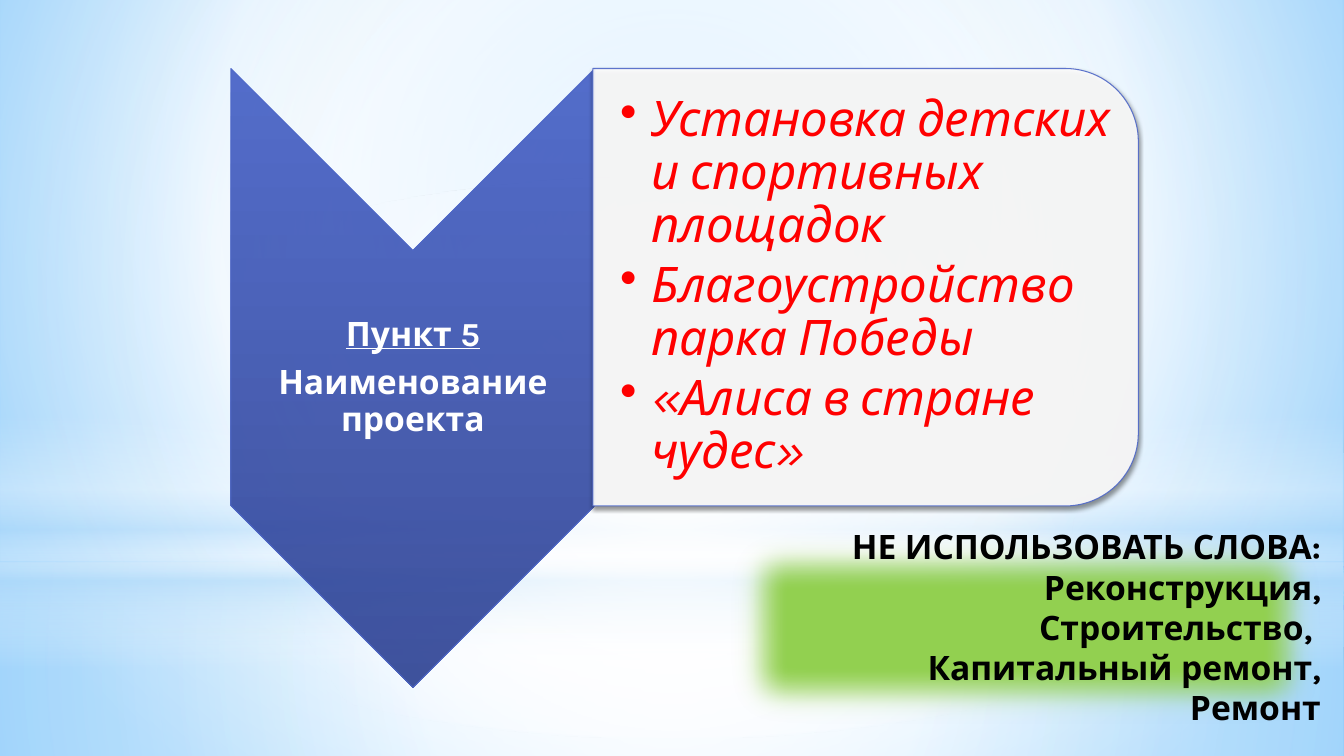
import pptx
import pptx.util
import pptx.oxml
import pptx.oxml.ns
from pptx.dml.color import RGBColor
from pptx.enum.shapes import MSO_SHAPE
from pptx.enum.text import MSO_ANCHOR, PP_ALIGN
from pptx.util import Inches, Pt

FONT = "Karla"
WHITE = RGBColor(0xFF, 0xFF, 0xFF)
BLACK = RGBColor(0x00, 0x00, 0x00)
RED = RGBColor(0xFF, 0x00, 0x00)
GREEN = RGBColor(0x92, 0xD0, 0x50)
EDGE_BLUE = RGBColor(0x4E, 0x67, 0xC8)
ARROW_TOP = RGBColor(0x43, 0x5E, 0xC5)
ARROW_BOTTOM = RGBColor(0x2B, 0x40, 0x92)
PALE_BLUE = RGBColor(0xB4, 0xDC, 0xFA)
SKY = RGBColor(0x9E, 0xD5, 0xFF)
DEEP_SKY = RGBColor(0x5B, 0xB9, 0xFF)
CENTRE = (50, 50, 50, 50)


def xml(text):
    return pptx.oxml.parse_xml(
        text.replace(">", " " + pptx.oxml.ns.nsdecls("a") + ">", 1))


def set_gradient(fill, owner, stops, focus=None):
    fill.gradient()
    old = owner.find(pptx.oxml.ns.qn("a:gradFill"))
    gs = "".join(
        f'<a:gs pos="{pos * 1000}"><a:srgbClr val="{color}">'
        f'<a:alpha val="{alpha * 1000}"/></a:srgbClr></a:gs>'
        for pos, color, alpha in stops)
    if focus:
        sides = " ".join(f'{k}="{v * 1000}"' for k, v in zip("ltrb", focus))
        way = f'<a:path path="circle"><a:fillToRect {sides}/></a:path>'
    else:
        way = '<a:lin ang="5400000" scaled="0"/>'
    owner.replace(old, xml(
        f'<a:gradFill rotWithShape="0"><a:gsLst>{gs}</a:gsLst>{way}</a:gradFill>'))


def set_alpha(owner, percent):
    for clr in owner.iterfind("./" + pptx.oxml.ns.qn("a:solidFill") + "/*"):
        clr.append(xml(f'<a:alpha val="{percent * 1000}"></a:alpha>'))


def add_shape(slide, kind, x, y, w, h):
    sp = slide.shapes.add_shape(kind, Inches(x), Inches(y), Inches(w), Inches(h))
    sp.shadow.inherit = False
    sp.line.fill.background()
    return sp


def add_turned(slide, kind, x, y, w, h):
    sp = add_shape(slide, kind, x + (w - h) / 2, y + (h - w) / 2, h, w)
    sp.rotation = 90
    sp.line.color.rgb = EDGE_BLUE
    sp.line.width = Pt(0.75)
    set_alpha(sp.element.spPr.find(pptx.oxml.ns.qn("a:ln")), 90)
    return sp


def add_effect(sp, effect):
    sp.element.spPr.find(pptx.oxml.ns.qn("a:effectLst")).append(xml(effect))


def add_text_box(slide, x, y, w, h, left=0.02):
    tf = slide.shapes.add_textbox(
        Inches(x), Inches(y), Inches(w), Inches(h)).text_frame
    tf.word_wrap = True
    tf.vertical_anchor = MSO_ANCHOR.MIDDLE
    tf.margin_left = Inches(left)
    tf.margin_top = tf.margin_right = tf.margin_bottom = Inches(0.02)
    return tf


def add_paragraphs(tf, lines, size, color, align, bold=False, italic=False):
    for i, line in enumerate(lines):
        p = tf.add_paragraph() if i else tf.paragraphs[0]
        p.alignment = align
        r = p.add_run()
        r.text = line
        r.font.name = FONT
        r.font.size = Pt(size)
        r.font.color.rgb = color
        r.font.bold = bold
        r.font.italic = italic


def space_paragraphs(tf, after):
    for p in tf.paragraphs:
        p.line_spacing = 0.9
        p.space_after = Pt(after)


def draw_backdrop(slide, w, h):
    slide.background.fill.solid()
    bg = slide.element.cSld.bg.bgPr
    set_gradient(slide.background.fill, bg,
                 [(0, SKY, 100), (60, WHITE, 100), (100, DEEP_SKY, 100)],
                 (20, 10, 20, 60))
    horizon = 5.58
    layers = [
        (MSO_SHAPE.RECTANGLE, horizon, h - horizon, CENTRE,
         [(0, WHITE, 91), (37, WHITE, 76), (100, PALE_BLUE, 79)]),
        (MSO_SHAPE.RECTANGLE, 0, horizon, CENTRE,
         [(0, WHITE, 89), (48, WHITE, 62), (100, PALE_BLUE, 79)]),
        (MSO_SHAPE.RECTANGLE, 4.12, 2.5, None,
         [(0, WHITE, 0), (29, WHITE, 30), (45, PALE_BLUE, 40),
          (55, WHITE, 26), (65, PALE_BLUE, 60), (100, WHITE, 0)]),
        (MSO_SHAPE.OVAL, 1.75, horizon, CENTRE,
         [(0, WHITE, 100), (56, WHITE, 0)]),
    ]
    for kind, top, height, focus, stops in layers:
        sp = add_shape(slide, kind, 0, top, w, height)
        set_gradient(sp.fill, sp.element.spPr, stops, focus)


def draw_arrow(slide, x, y, w, h):
    sp = add_turned(slide, MSO_SHAPE.CHEVRON, x, y, w, h)
    set_gradient(sp.fill, sp.element.spPr,
                 [(0, ARROW_TOP, 90), (100, ARROW_BOTTOM, 90)])
    tf = add_text_box(slide, x, y + w / 2, w, h - w)
    add_paragraphs(tf, ["Пункт 5", "Наименование проекта"],
                   24, WHITE, PP_ALIGN.CENTER, bold=True)
    tf.paragraphs[0].runs[0].font.underline = True
    space_paragraphs(tf, 8.4)


def draw_examples(slide, x, y, w, h):
    sp = add_turned(slide, MSO_SHAPE.ROUND_2_SAME_RECTANGLE, x, y, w, h)
    sp.fill.solid()
    sp.fill.fore_color.rgb = WHITE
    set_alpha(sp.element.spPr, 90)
    add_effect(sp, f'<a:outerShdw blurRad="{Pt(3.1)}" dist="{Pt(1.8)}" dir="5400000" '
                   f'rotWithShape="0"><a:srgbClr val="{BLACK}">'
                   '<a:alpha val="45000"/></a:srgbClr></a:outerShdw>')
    tf = add_text_box(slide, x, y + 0.21, w - 0.21, h - 0.43, left=0.27)
    add_paragraphs(tf, ["Установка детских и спортивных площадок",
                        "Благоустройство парка Победы",
                        "«Алиса в стране чудес»"],
                   35, RED, PP_ALIGN.LEFT, italic=True)
    space_paragraphs(tf, 5.25)
    for p in tf.paragraphs:
        p.level = 1
        pPr = p._p.get_or_add_pPr()
        pPr.set("marL", str(Inches(0.31)))
        pPr.set("indent", str(Inches(-0.31)))
        pPr.append(xml('<a:buChar char="•"></a:buChar>'))


def draw_warning(slide, x, y, w, h):
    sp = add_shape(slide, MSO_SHAPE.RECTANGLE, x, y, w, h)
    sp.fill.solid()
    sp.fill.fore_color.rgb = GREEN
    add_effect(sp, f'<a:softEdge rad="{Pt(25)}"></a:softEdge>')
    tf = sp.text_frame
    tf.word_wrap = True
    tf.vertical_anchor = MSO_ANCHOR.TOP
    add_paragraphs(tf, ["НЕ ИСПОЛЬЗОВАТЬ СЛОВА:", "Реконструкция,",
                        "Строительство, ", "Капитальный ремонт,", "Ремонт"],
                   24, BLACK, PP_ALIGN.RIGHT, bold=True)


def main():
    prs = pptx.Presentation()
    prs.slide_width = Inches(13.33)
    prs.slide_height = Inches(7.5)
    slide = prs.slides.add_slide(prs.slide_layouts[6])
    draw_backdrop(slide, 13.33, 7.5)
    draw_arrow(slide, 2.29, 0.68, 3.61, 6.14)
    draw_examples(slide, 5.88, 0.68, 5.41, 4.34)
    draw_warning(slide, 7.14, 5.17, 6.06, 2.12)
    prs.save("out.pptx")


if __name__ == "__main__":
    main()
